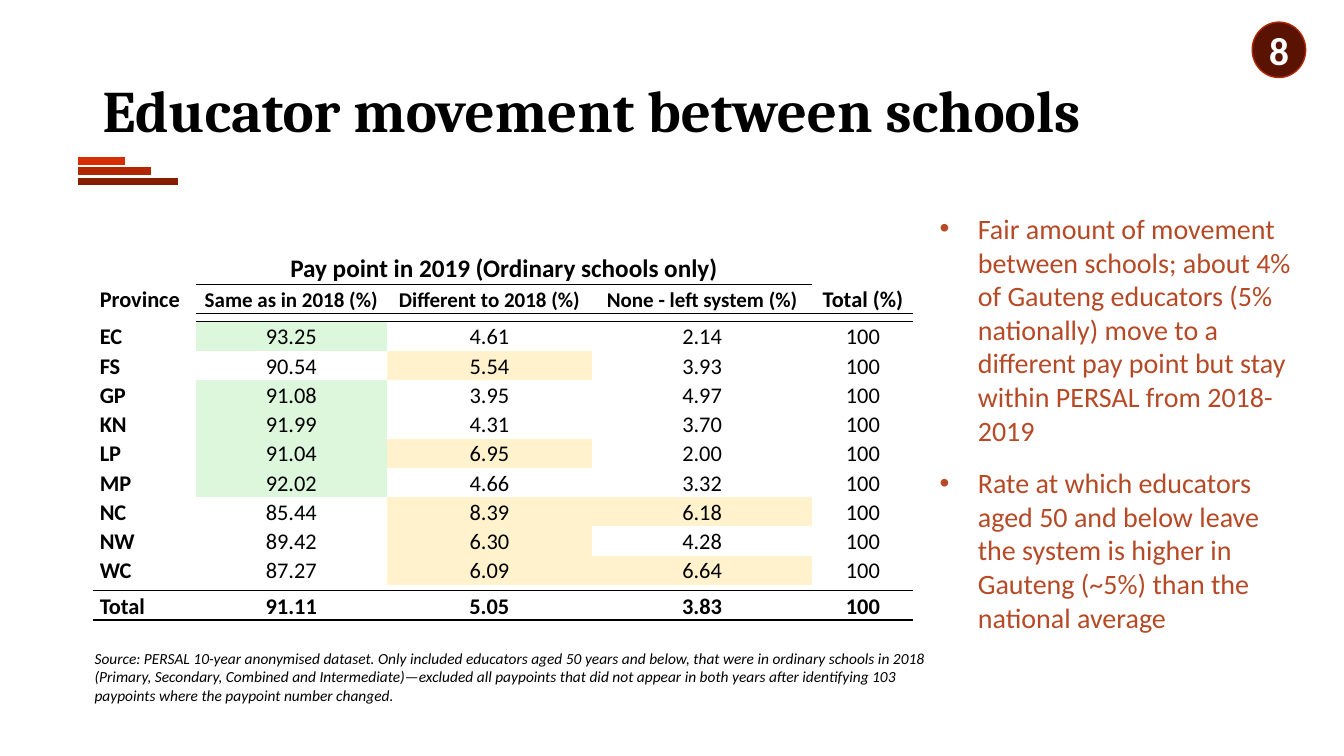
import pptx
import pptx.dml.color
import pptx.enum.shapes
import pptx.enum.text
import pptx.oxml.ns
import pptx.util
from lxml import etree

Pt = pptx.util.Pt
qn = pptx.oxml.ns.qn
ALIGN = pptx.enum.text.PP_ALIGN
ANCHOR = pptx.enum.text.MSO_ANCHOR

COLORS = {
    "black": "000000", "white": "FFFFFF", "rust": "B64926", "maroon": "591300",
    "dark": "851D00", "mid": "B22600", "bright": "D62E00",
    "green": "DDF7DD", "yellow": "FFF2CC",
}
NO_GRID = "{2D5ABB26-0587-4C30-8999-92F81FD0307C}"
COLUMNS = [7.65, 14.25, 15.23, 16.43, 7.5]
LINE_ROW = 3.87
HEADING = "Pay point in 2019 (Ordinary schools only)"
LABELS = ["Province", "Same as in 2018 (%)", "Different to 2018 (%)",
          "None - left system (%)", "Total (%)"]
PROVINCES = [
    ["EC", "93.25", "4.61", "2.14", "100"],
    ["FS", "90.54", "5.54", "3.93", "100"],
    ["GP", "91.08", "3.95", "4.97", "100"],
    ["KN", "91.99", "4.31", "3.70", "100"],
    ["LP", "91.04", "6.95", "2.00", "100"],
    ["MP", "92.02", "4.66", "3.32", "100"],
    ["NC", "85.44", "8.39", "6.18", "100"],
    ["NW", "89.42", "6.30", "4.28", "100"],
    ["WC", "87.27", "6.09", "6.64", "100"],
]
TOTAL = ["Total", "91.11", "5.05", "3.83", "100"]
BULLETS = [
    "Fair amount of movement between schools; about 4% of Gauteng educators (5% nationally) "
    "move to a different pay point but stay within PERSAL from 2018-2019",
    "Rate at which educators aged 50 and below leave the system is higher in Gauteng (~5%) "
    "than the national average",
]
SOURCE = (
    "Source: PERSAL 10-year anonymised dataset. Only included educators aged 50 years and below, "
    "that were in ordinary schools in 2018 (Primary, Secondary, Combined and Intermediate)—excluded "
    "all paypoints that did not appear in both years after identifying 103 paypoints where the "
    "paypoint number changed."
)


class Deck:
    """Holds the style and current slide; lengths are percentages of the slide size."""

    def __init__(self):
        self.prs = pptx.Presentation()
        self.prs.slide_width = pptx.util.Inches(13.33)
        self.prs.slide_height = pptx.util.Inches(7.5)
        self.s = self.prs.slides.add_slide(self.prs.slide_layouts[6])

    def x(self, share):
        return round(self.prs.slide_width * share / 100)

    def y(self, share):
        return round(self.prs.slide_height * share / 100)

    def box(self, left, top, width, height):
        return self.x(left), self.y(top), self.x(width), self.y(height)

    def rgb(self, name):
        return pptx.dml.color.RGBColor.from_string(COLORS[name])

    def run(self, p, text, size, color="black", bold=False, italic=False, font="Calibri"):
        r = p.add_run()
        r.text = text
        r.font.name, r.font.size = font, Pt(size)
        r.font.bold, r.font.italic = bold, italic
        r.font.color.rgb = self.rgb(color)

    def line(self, left, right, top, color, weight):
        sp = self.s.shapes.add_connector(
            pptx.enum.shapes.MSO_CONNECTOR.STRAIGHT,
            self.x(left), self.y(top), self.x(right), self.y(top))
        sp.line.color.rgb = self.rgb(color)
        sp.line.width = Pt(weight)
        etree.SubElement(sp._element.spPr, qn("a:effectLst"))

    def text(self, box, text, size, anchor=ANCHOR.TOP, spacing=1.0, **style):
        tf = self.s.shapes.add_textbox(*self.box(*box)).text_frame
        tf.word_wrap = True
        tf.vertical_anchor = anchor
        p = tf.paragraphs[0]
        p.line_spacing = spacing
        self.run(p, text, size, **style)

    def bullets(self, box, items, size, color):
        tf = self.s.shapes.add_textbox(*self.box(*box)).text_frame
        tf.word_wrap = True
        for i, item in enumerate(items):
            p = tf.add_paragraph() if i else tf.paragraphs[0]
            p.space_before = Pt(13.5 if i else 0)
            pPr = p._p.get_or_add_pPr()
            indent = pptx.util.Inches(0.38)
            pPr.set("marL", str(indent))
            pPr.set("indent", str(-indent))
            etree.SubElement(pPr, qn("a:buFont")).set("typeface", "Arial")
            etree.SubElement(pPr, qn("a:buChar")).set("char", "•")
            self.run(p, item, size, color)

    def badge(self, box, text, size):
        sp = self.s.shapes.add_shape(pptx.enum.shapes.MSO_SHAPE.OVAL, *self.box(*box))
        sp.shadow.inherit = False
        sp.fill.solid()
        sp.fill.fore_color.rgb = self.rgb("maroon")
        sp.line.color.rgb = self.rgb("mid")
        sp.line.width = Pt(1)
        tf = sp.text_frame
        tf.word_wrap = False
        tf.margin_left = tf.margin_right = tf.margin_top = tf.margin_bottom = 0
        tf.vertical_anchor = ANCHOR.MIDDLE
        tf.paragraphs[0].alignment = ALIGN.CENTER
        self.run(tf.paragraphs[0], text, size, "white", bold=True)

    def border(self, cell, side):
        ln = etree.SubElement(cell._tc.get_or_add_tcPr(), qn(f"a:ln{side}"), w=str(Pt(1)))
        fill = etree.SubElement(ln, qn("a:solidFill"))
        etree.SubElement(fill, qn("a:srgbClr"), val=COLORS["black"])

    def cell(self, cell, text, size, bold, align, fill, sides):
        cell.margin_left = cell.margin_right = pptx.util.Inches(0.07)
        cell.margin_top = cell.margin_bottom = 0
        cell.vertical_anchor = ANCHOR.BOTTOM
        for side in sides:
            self.border(cell, side)
        if fill:
            cell.fill.solid()
            cell.fill.fore_color.rgb = self.rgb(fill)
        else:
            cell.fill.background()
        p = cell.text_frame.paragraphs[0]
        if text:
            p.alignment = align
            p.line_spacing = 1.07
            self.run(p, text, size, bold=bold)
        else:
            etree.SubElement(p._p, qn("a:endParaRPr"), sz="100")

    def table(self, left, top, rows, heights, widths, rules, style):
        frame = self.s.shapes.add_table(
            len(rows), len(widths), *self.box(left, top, sum(widths), sum(heights)))
        tbl = frame.table
        tbl.first_row = tbl.horz_banding = False
        tbl._tbl.tblPr.find(qn("a:tableStyleId")).text = NO_GRID
        for column, width in zip(tbl.columns, widths):
            column.width = self.x(width)
        for row, height in zip(tbl.rows, heights):
            row.height = self.y(height)
        for i, row in enumerate(rows):
            for j, text in enumerate(row):
                sides = [side for side, k in (("T", i - 1), ("B", i)) if j in rules.get(k, ())]
                self.cell(tbl.cell(i, j), text, *style(i, j, text), sides)
        tbl.cell(0, 1).merge(tbl.cell(0, 3))


def cell_style(i, j, text):
    province = 3 <= i < 3 + len(PROVINCES)
    size = 18 if i == 0 else 15 if i == 1 and 1 <= j <= 3 else 16
    align = ALIGN.CENTER if j else ALIGN.LEFT
    fill = None
    if province and j == 1 and float(text) > 91:
        fill = "green"
    elif province and j in (2, 3) and float(text) > 5:
        fill = "yellow"
    return size, j == 0 or not province, align, fill


def main():
    deck = Deck()
    for i, (right, color) in enumerate([(9.3, "bright"), (11.25, "mid"), (13.28, "dark")]):
        deck.line(5.78, right, 21.33 + 1.33 * i, color, 5.5)
    deck.text((6.9, 5.33, 86.27, 19.33), "Educator movement between schools", 42,
              ANCHOR.MIDDLE, 0.9, bold=True, font="Cambria")
    deck.bullets((69.17, 27.33, 27.98, 57.73), BULLETS, 20, "rust")
    deck.text((6.3, 85.2, 64.44, 9.87), SOURCE, 11, italic=True)
    blank = [""] * len(COLUMNS)
    rows = [["", HEADING, "", "", ""], LABELS, blank, *PROVINCES, blank, TOTAL]
    heights = [4.4, LINE_ROW, 1.07, *[LINE_ROW] * len(PROVINCES), 0.8, LINE_ROW]
    rules = {0: range(1, 4), 1: range(1, 5), 12: range(5), 13: range(5)}
    deck.table(6.9, 33.2, rows, heights, COLUMNS, rules, cell_style)
    deck.badge((93.17, 2.93, 3.98, 7.33), "8", 28)
    deck.prs.save("out.pptx")


if __name__ == "__main__":
    main()
